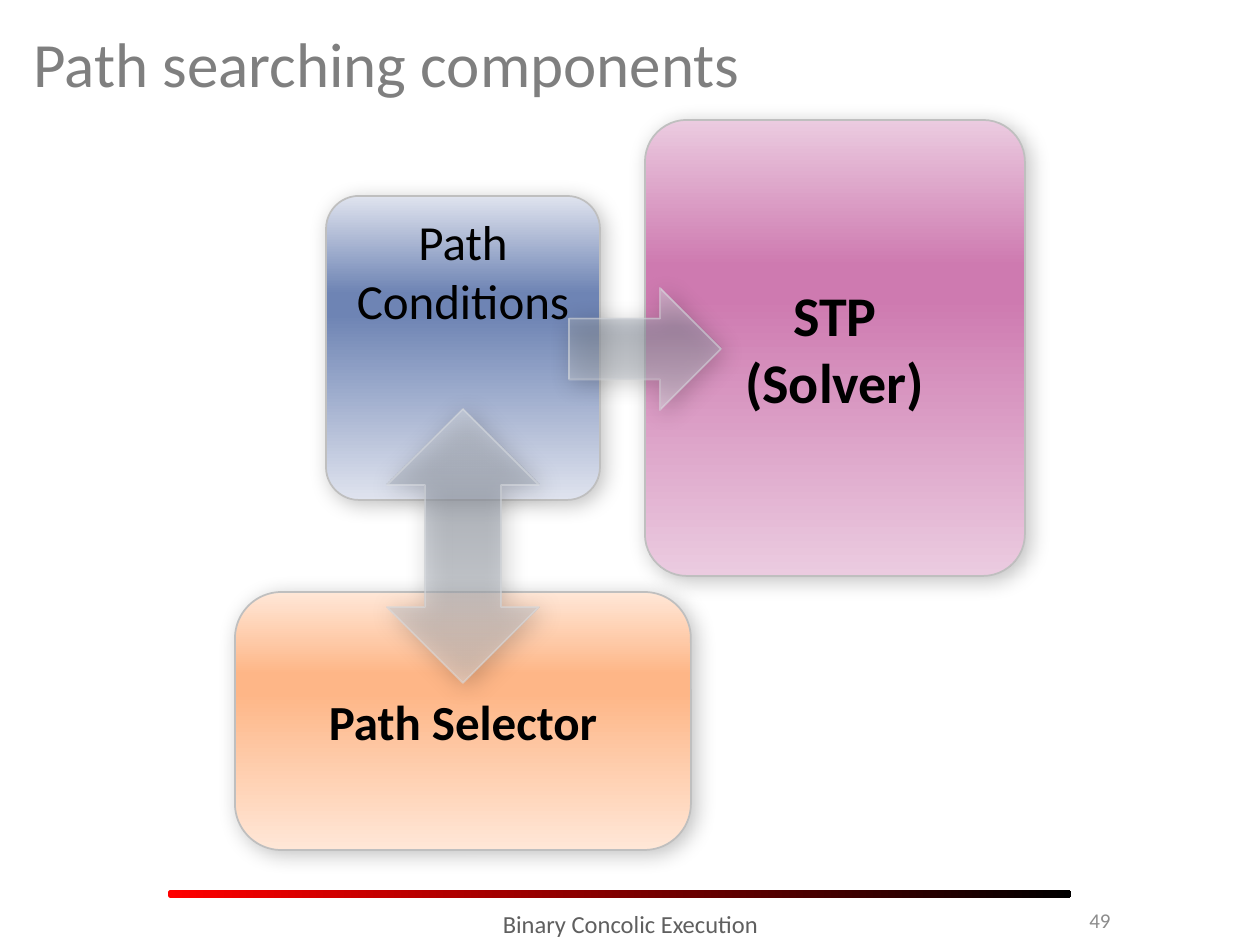
from dataclasses import dataclass

from lxml import etree
from pptx import Presentation
from pptx import util as u
from pptx.dml.color import RGBColor
from pptx.enum import shapes, text
from pptx.oxml.ns import qn

PX = 914400 / 126
SHAPE = shapes.MSO_SHAPE
ALIGN = text.PP_ALIGN
ANCHOR = text.MSO_ANCHOR


@dataclass(frozen=True)
class Theme:
    font: str = "Calibri"
    title_size: int = 36
    solver_size: int = 32
    box_size: int = 28
    footer_size: int = 14
    number_size: int = 12
    ink: str = "000000"
    title: str = "7F7F7F"
    footer: str = "5F5F5F"
    number: str = "8C8C8C"
    border: str = "BFBFBF"
    bar: tuple = ("FF0000", "000000")
    pink: tuple = ("EBCBE0", "CE7AB0")
    blue: tuple = ("DFE3EE", "6E84B4")
    orange: tuple = ("FFE7D7", "FEB687")
    gray: tuple = ("DCDFE3", "969EAB")


def px(*lengths):
    return [u.Emu(round(n * PX)) for n in lengths]


def add_color(parent, color, opacity=100):
    clr = etree.SubElement(parent, qn("a:srgbClr"), val=color)
    if opacity < 100:
        etree.SubElement(clr, qn("a:alpha"), val=str(opacity * 1000))


class Deck:
    def __init__(self, theme):
        self.theme = theme
        self.prs = Presentation()
        self.prs.slide_width, self.prs.slide_height = px(1260, 945)
        self.s = self.prs.slides.add_slide(self.prs.slide_layouts[5])

    def set_text(self, tf, words, size, color, align, anchor, bold=False):
        tf.word_wrap = True
        tf.auto_size = text.MSO_AUTO_SIZE.NONE
        tf.vertical_anchor = anchor
        tf.text = words
        for p in tf.paragraphs:
            p.alignment = align
            for r in p.runs:
                r.font.name = self.theme.font
                r.font.size = u.Pt(size)
                r.font.bold = bold
                r.font.color.rgb = RGBColor.from_string(color)

    def title(self, words, *at):
        sp = self.s.shapes.title
        sp.left, sp.top, sp.width, sp.height = px(*at)
        self.set_text(sp.text_frame, words, self.theme.title_size,
                      self.theme.title, ALIGN.LEFT, ANCHOR.MIDDLE)

    def label(self, words, at, size, color, align, anchor):
        sp = self.s.shapes.add_textbox(*px(*at))
        self.set_text(sp.text_frame, words, size, color, align, anchor)

    def gradient(self, sp, stops, angle, opacity=100):
        sp.fill.gradient()
        sp.fill.gradient_angle = -angle % 360
        gs_list = sp._element.spPr.find(qn("a:gradFill")).find(qn("a:gsLst"))
        for gs in list(gs_list):
            gs_list.remove(gs)
        for pos, color in stops:
            gs = etree.SubElement(gs_list, qn("a:gs"), pos=str(pos * 1000))
            add_color(gs, color, opacity)

    def outline(self, sp, color, opacity):
        sp.line.width = u.Pt(1)
        sp.line.fill.solid()
        sp.line.color.rgb = RGBColor.from_string(color)
        if opacity < 100:
            ln = sp._element.spPr.find(qn("a:ln"))
            clr = next(ln.iter(qn("a:srgbClr")))
            etree.SubElement(clr, qn("a:alpha"), val=str(opacity * 1000))

    def shadow(self, sp, opacity, blur):
        effects = sp._element.spPr.find(qn("a:effectLst"))
        outer = etree.SubElement(
            effects, qn("a:outerShdw"), blurRad=str(u.Pt(blur)),
            dist=str(u.Pt(3)), dir=str(45 * 60000), rotWithShape="0")
        add_color(outer, self.theme.ink, opacity)

    def shape(self, kind, at, adj=None):
        sp = self.s.shapes.add_shape(kind, *px(*at))
        sp.shadow.inherit = False
        if adj is not None:
            sp.adjustments[0] = adj
        return sp

    def bar(self, *at):
        sp = self.shape(SHAPE.ROUNDED_RECTANGLE, at, 0.33)
        start, end = self.theme.bar
        self.gradient(sp, [(0, start), (100, end)], 0)
        sp.line.fill.background()

    def glossy(self, kind, at, colors, border, shadow, opacity=100, adj=None):
        sp = self.shape(kind, at, adj)
        edge, core = colors
        stops = [(0, edge), (32, core), (39, core), (100, edge)]
        self.gradient(sp, stops, 90, opacity)
        self.outline(sp, border, opacity)
        self.shadow(sp, *shadow)
        return sp

    def box(self, words, at, colors, adj, size, anchor=ANCHOR.MIDDLE, bold=True):
        sp = self.glossy(SHAPE.ROUNDED_RECTANGLE, at, colors,
                         self.theme.border, (23, 12), adj=adj)
        self.set_text(sp.text_frame, words, size, self.theme.ink,
                      ALIGN.CENTER, anchor, bold)

    def arrow(self, kind, *at):
        self.glossy(kind, at, self.theme.gray, self.theme.gray[0], (40, 14), 50)


def main():
    t = Theme()
    deck = Deck(t)
    deck.bar(168, 890, 903, 8)
    deck.title("Path searching components", 21, 10, 1218, 105)
    deck.label("49", (955, 895, 168, 50), t.number_size, t.number,
               ALIGN.RIGHT, ANCHOR.MIDDLE)
    deck.label("Binary Concolic Execution", (305, 903, 651, 42), t.footer_size,
               t.footer, ALIGN.CENTER, ANCHOR.TOP)
    deck.box("STP\v(Solver)", (645, 120, 380, 456), t.pink, 0.11, t.solver_size)
    deck.box("Path Conditions", (326, 196, 274, 304), t.blue, 0.12, t.box_size,
             ANCHOR.TOP, False)
    deck.box("Path Selector", (235, 592, 456, 258), t.orange, 0.18, t.box_size)
    deck.arrow(SHAPE.RIGHT_ARROW, 569, 288, 152, 122)
    deck.arrow(SHAPE.UP_DOWN_ARROW, 387, 409, 152, 274)
    deck.prs.save("out.pptx")


if __name__ == "__main__":
    main()
